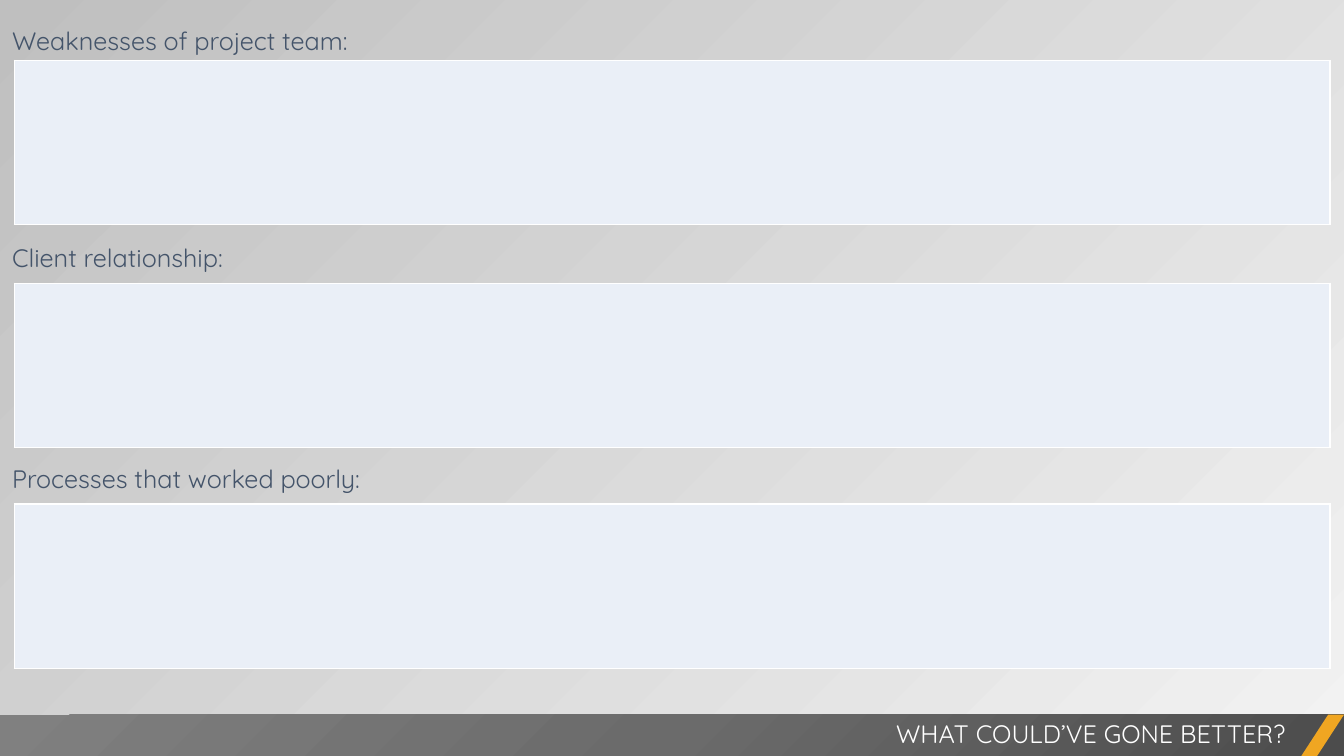
"""Build the project review slide on what could have gone better."""
from lxml import etree
from pptx import Presentation
from pptx.dml.color import RGBColor
from pptx.enum import shapes, text
from pptx.oxml import ns
from pptx.util import Inches, Pt

FONT = "Quicksand"
WHITE = RGBColor(0xFF, 0xFF, 0xFF)
PALE = RGBColor(0xEA, 0xEF, 0xF7)
SLATE = RGBColor(0x44, 0x54, 0x6A)
AMBER = RGBColor(0xF0, 0xA6, 0x22)
LIGHT = RGBColor(0xF2, 0xF2, 0xF2)
SILVER = RGBColor(0xBF, 0xBF, 0xBF)
GREYS = (RGBColor(0x4C, 0x4C, 0x4C), RGBColor(0x6B, 0x6B, 0x6B),
         RGBColor(0x80, 0x80, 0x80))
WIDE = 13.33
BAR = 7.09
PANELS = (
    ("Weaknesses of project team:", 0.19, 0.41, Pt(21.5), 0.6),
    ("Client relationship:", 2.28, 0.45, 1.2, 2.81),
    ("Processes that worked poorly:", 4.48, 0.45, 1.2, 5),
)


def add(node, tag, **attrs):
    """Append a child element and return it."""
    return etree.SubElement(node, ns.qn(tag), **attrs)


def paint(slide):
    """Fill the background with a diagonal gradient."""
    fill = slide.background.fill
    fill.gradient()
    fill.gradient_angle = 135
    for stop, tint, place in zip(fill.gradient_stops, (LIGHT, SILVER), (0, 1)):
        stop.color.rgb = tint
        stop.position = place


def label(slide, words, box, tint, inset=(0.1, 0.05)):
    """Add one line of text and return its paragraph."""
    frame = slide.shapes.add_textbox(*map(Inches, box)).text_frame
    frame.word_wrap = True
    frame.auto_size = text.MSO_AUTO_SIZE.SHAPE_TO_FIT_TEXT
    frame.margin_left = frame.margin_right = Inches(inset[0])
    frame.margin_top = frame.margin_bottom = Inches(inset[1])
    para = frame.paragraphs[0]
    run = para.add_run()
    run.text = words
    run.font.name = FONT
    run.font.size = Pt(18)
    run.font.color.rgb = tint
    return para


def panel(slide, words, top, high, space, edge):
    """Add a heading and the empty answer table below it."""
    table = slide.shapes.add_table(
        1, 1, Inches(0.14), Inches(edge), Inches(13.05), Inches(1.63)).table
    table.first_row = table.horz_banding = False
    cell = table.cell(0, 0)
    props = cell._tc.get_or_add_tcPr()
    for side in "LRTB":
        line = add(props, f"a:ln{side}", w=str(Pt(1)))
        add(add(line, "a:solidFill"), "a:srgbClr", val=str(WHITE))
    cell.fill.solid()
    cell.fill.fore_color.rgb = PALE
    para = label(slide, words, (0, top, 7.63, high), SLATE, (0.12, 0.06))
    para.line_spacing = space
    before = add(para._p.get_or_add_pPr(), "a:spcBef")
    add(before, "a:spcPct", val="20000")


def block(slide, kind, left, width):
    """Add an unlined shape on the footer band."""
    shape = slide.shapes.add_shape(
        kind, Inches(left), Inches(BAR), Inches(width), Inches(0.42))
    shape.shadow.inherit = False
    shape.line.fill.background()
    return shape


def footer(slide):
    """Add the grey band, its amber slash and the title."""
    kinds = shapes.MSO_SHAPE
    band = block(slide, kinds.RECTANGLE, 0, WIDE)
    band.fill.gradient()
    grad = band._element.spPr.find(ns.qn("a:gradFill"))
    for child in list(grad):
        grad.remove(child)
    stops = add(grad, "a:gsLst")
    for i, tint in enumerate(GREYS):
        stop = add(stops, "a:gs", pos=str(i * 50000))
        add(stop, "a:srgbClr", val=str(tint))
    focus = add(grad, "a:path", path="circle")
    add(focus, "a:fillToRect", l="100000", t="100000")
    slash = block(slide, kinds.PARALLELOGRAM, 12.9, 0.43)
    slash.adjustments[0] = 0.65
    slash.fill.solid()
    slash.fill.fore_color.rgb = AMBER
    para = label(slide, "WHAT COULD’VE GONE BETTER?",
                 (5.25, 7.08, 7.6, 0.4), WHITE)
    para.alignment = text.PP_ALIGN.RIGHT


def main():
    """Build and save the slide."""
    deck = Presentation()
    deck.slide_width = Inches(WIDE)
    deck.slide_height = Inches(7.5)
    slide = deck.slides.add_slide(deck.slide_layouts[6])
    paint(slide)
    for item in PANELS:
        panel(slide, *item)
    footer(slide)
    deck.save("out.pptx")


if __name__ == "__main__":
    main()
